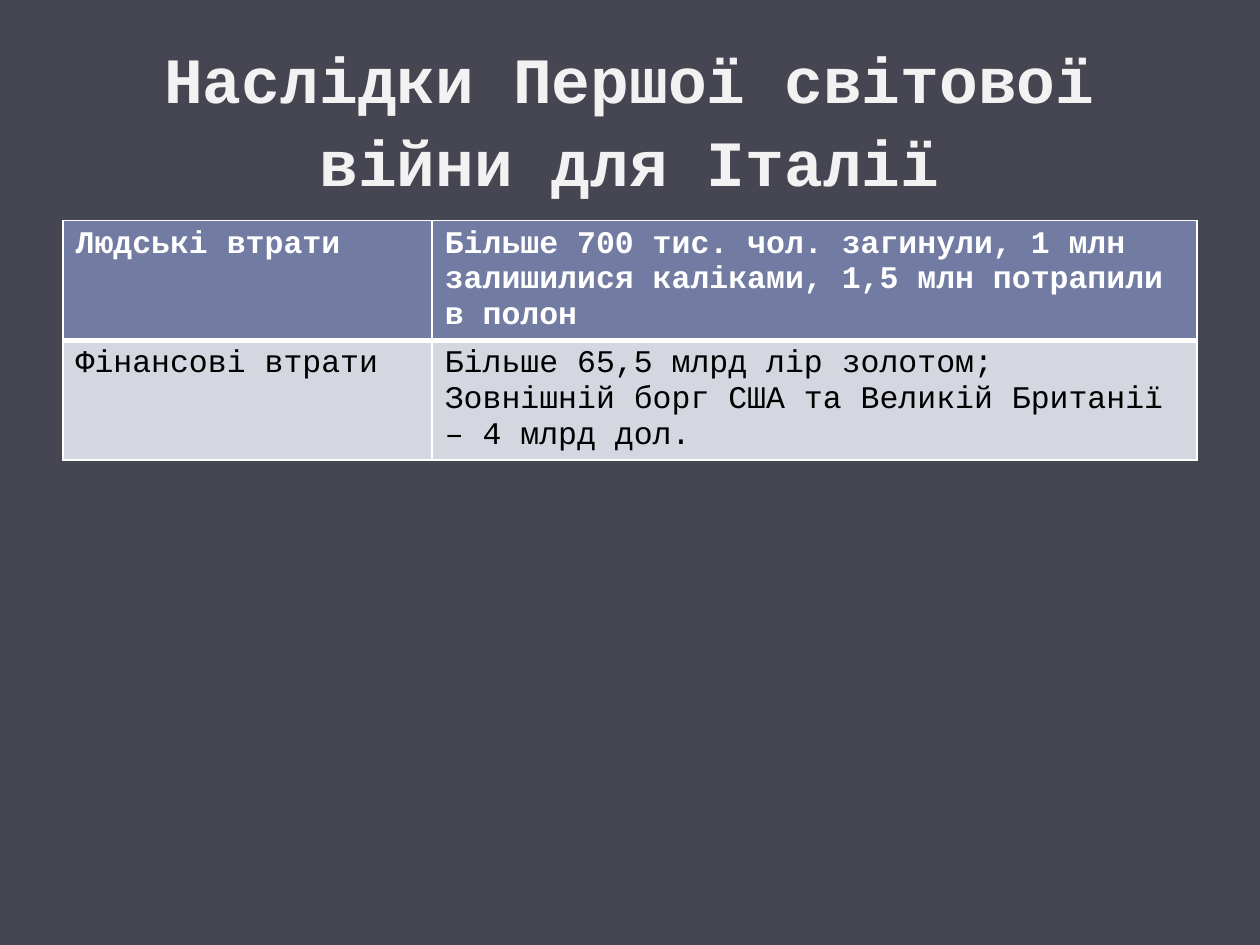
from dataclasses import dataclass

from lxml.etree import SubElement
from pptx import Presentation
from pptx.dml.color import RGBColor
from pptx.enum.text import MSO_ANCHOR as Anchor, MSO_AUTO_SIZE as AutoSize, PP_ALIGN as Align
from pptx.oxml.ns import qn
from pptx.table import _Cell as Cell
from pptx.util import Pt

FONT = "Courier New"
WHITE = "FFFFFF"
COLUMN_WIDTHS = (211, 437)
ROW_HEIGHT = 68.4


@dataclass(frozen=True)
class LossRow:
    texts: tuple[str, str]
    fill: str
    color: str
    bold: bool
    top_border: float
    bottom_border: float


LOSS_ROWS = (
    LossRow(
        ("Людські втрати",
         "Більше 700 тис. чол. загинули, 1 млн залишилися каліками, 1,5 млн потрапили в полон"),
        "727CA3", WHITE, True, 1, 3,
    ),
    LossRow(
        ("Фінансові втрати",
         "Більше 65,5 млрд лір золотом;\nЗовнішній борг США та Великій Британії – 4 млрд дол."),
        "D5D7E0", "000000", False, 3, 1,
    ),
)


def rgb(color: str) -> RGBColor:
    return RGBColor.from_string(color)


def format_text(text_frame, size: float, color: str, bold: bool) -> None:
    for paragraph in text_frame.paragraphs:
        font = paragraph.font
        font.name, font.size, font.bold = FONT, Pt(size), bold
        font.color.rgb = rgb(color)


def set_borders(cell: Cell, top: float, bottom: float) -> None:
    properties = cell._tc.get_or_add_tcPr()
    for side, width in (("L", 1), ("R", 1), ("T", top), ("B", bottom)):
        line = SubElement(properties, qn(f"a:ln{side}"), w=str(Pt(width)))
        fill = SubElement(line, qn("a:solidFill"))
        SubElement(fill, qn("a:srgbClr"), val=WHITE)


def fill_cell(cell: Cell, text: str, row: LossRow) -> None:
    cell.text = text
    format_text(cell.text_frame, 18, row.color, row.bold)
    set_borders(cell, row.top_border, row.bottom_border)
    cell.fill.solid()
    cell.fill.fore_color.rgb = rgb(row.fill)


def add_title(slide, text: str) -> None:
    title = slide.shapes.title
    title.left, title.top, title.width, title.height = Pt(36), Pt(21.6), Pt(648), Pt(90)
    frame = title.text_frame
    frame.text = text
    frame.word_wrap = True
    frame.auto_size = AutoSize.NONE
    frame.vertical_anchor = Anchor.MIDDLE
    paragraph = frame.paragraphs[0]
    paragraph.alignment = Align.CENTER
    paragraph.line_spacing = 1.07
    format_text(frame, 36.9, "F2F2F2", True)


def add_loss_table(slide) -> None:
    table = slide.shapes.add_table(
        len(LOSS_ROWS), len(COLUMN_WIDTHS), Pt(36), Pt(126),
        Pt(sum(COLUMN_WIDTHS)), Pt(ROW_HEIGHT * len(LOSS_ROWS)),
    ).table
    for column, width in zip(table.columns, COLUMN_WIDTHS):
        column.width = Pt(width)
    for table_row, row in zip(table.rows, LOSS_ROWS):
        table_row.height = Pt(ROW_HEIGHT)
        for cell, text in zip(table_row.cells, row.texts):
            fill_cell(cell, text, row)


def main() -> None:
    presentation = Presentation()
    presentation.slide_width, presentation.slide_height = Pt(720), Pt(540)
    slide = presentation.slides.add_slide(presentation.slide_layouts[5])
    slide.background.fill.solid()
    slide.background.fill.fore_color.rgb = rgb("464653")
    add_title(slide, "Наслідки Першої світової війни для Італії")
    add_loss_table(slide)
    presentation.save("out.pptx")


if __name__ == "__main__":
    main()
